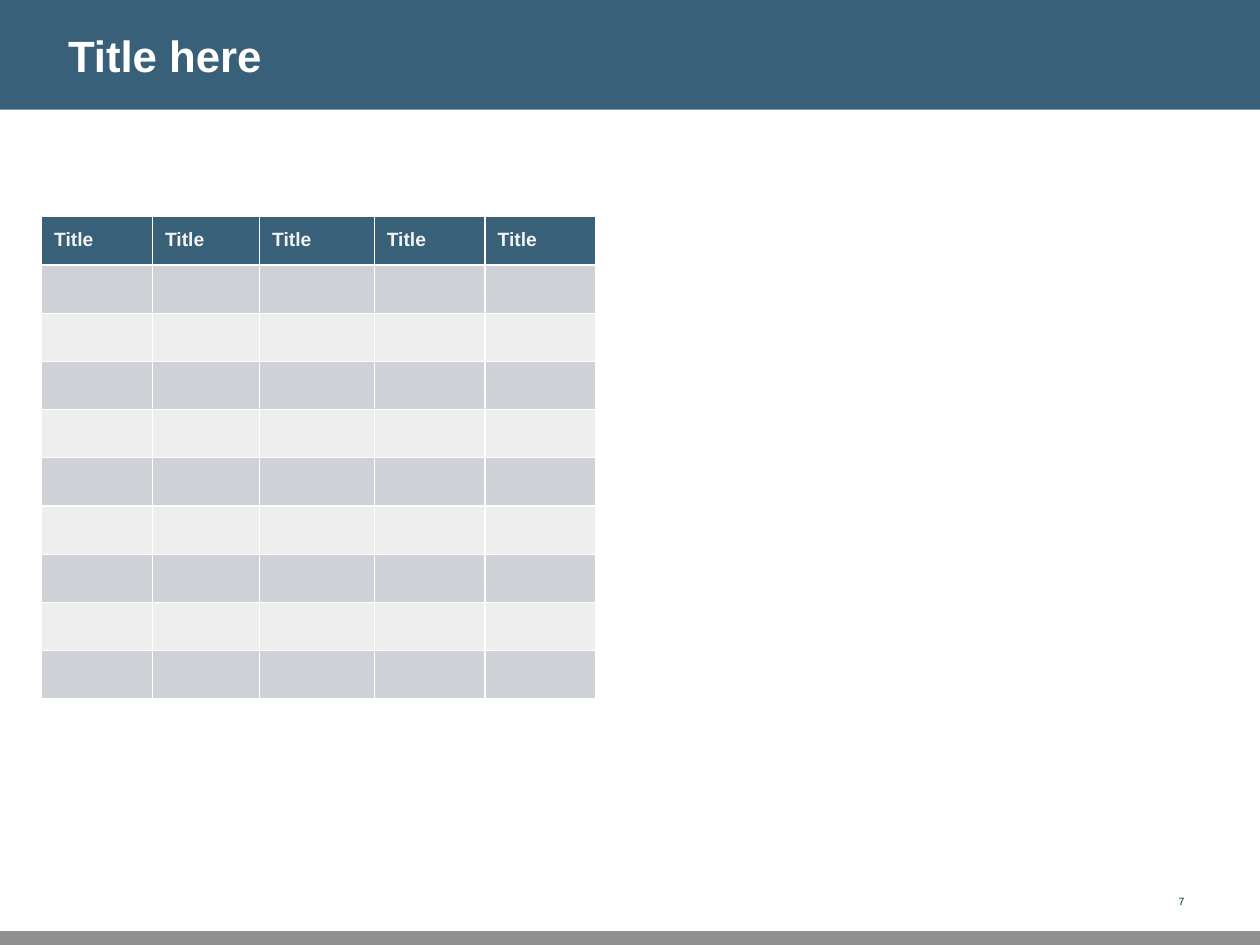
"""Build a slide with a title band, a striped table and a page number."""
from lxml import etree
from pptx import Presentation
from pptx import util as u
from pptx.dml.color import RGBColor
from pptx.enum import shapes, text
from pptx.oxml.ns import qn

HUES = {"band": "386079", "foot": "919090", "white": "FFFFFF", "head": "F3F3F3",
        "dark": "CED2D7", "light": "EEEEEE", "page": "00303C"}
PAD = u.Inches(0.1)


def paint(fill, hue):
    fill.solid()
    fill.fore_color.rgb = RGBColor.from_string(HUES[hue])


def style(frame, size, hue, bold=False, align=text.PP_ALIGN.LEFT):
    para = frame.paragraphs[0]
    para.alignment = align
    font = para.runs[0].font
    font.name, font.size, font.bold = "Arial", u.Pt(size), bold
    font.color.rgb = RGBColor.from_string(HUES[hue])


deck = Presentation()
deck.slide_width, deck.slide_height = u.Inches(10), u.Inches(7.5)
wide, high = deck.slide_width, deck.slide_height
slide = deck.slides.add_slide(deck.slide_layouts[5])
band = u.Inches(0.87)
foot = u.Inches(0.11)

for top, tall, hue in ((0, band, "band"), (high - foot, foot, "foot")):
    bar = slide.shapes.add_shape(shapes.MSO_SHAPE.RECTANGLE, 0, top, wide, tall)
    bar.shadow.inherit = False
    paint(bar.fill, hue)
    bar.line.fill.background()

title = slide.shapes.title
title.left, title.top, title.width, title.height = u.Inches(0.44), 0, u.Inches(7.87), band
slide.shapes._spTree.append(title._element)
page = slide.shapes.add_textbox(u.Inches(8.96), u.Inches(6.93), u.Inches(0.54), u.Inches(0.44))
for box, words in ((title, "Title here"), (page, "7")):
    frame = box.text_frame
    frame.text = words
    frame.word_wrap = True
    frame.auto_size = text.MSO_AUTO_SIZE.NONE
    frame.vertical_anchor = text.MSO_ANCHOR.MIDDLE
    frame.margin_left = frame.margin_right = frame.margin_top = frame.margin_bottom = PAD
style(title.text_frame, 25, "white", True)
style(page.text_frame, 6, "page", align=text.PP_ALIGN.RIGHT)

cols = [0.88, 0.85, 0.91, 0.88, 0.88]
rows = 10
table = slide.shapes.add_table(rows, len(cols), u.Inches(0.33), u.Inches(1.72),
                               u.Inches(sum(cols)), u.Inches(3.83)).table
for col, size in zip(table.columns, cols):
    col.width = u.Inches(size)
for r in range(rows):
    for c in range(len(cols)):
        cell = table.cell(r, c)
        props = cell._tc.get_or_add_tcPr()
        for side in ("a:lnL", "a:lnR", "a:lnT", "a:lnB"):
            line = etree.SubElement(props, qn(side), w=str(u.Pt(0.75)))
            solid = etree.SubElement(line, qn("a:solidFill"))
            etree.SubElement(solid, qn("a:srgbClr"), val=HUES["white"])
        cell.margin_left = cell.margin_right = PAD
        cell.margin_top = cell.margin_bottom = 0 if r else PAD
        paint(cell.fill, ("light", "dark")[r % 2] if r else "band")
        if r == 0:
            cell.text_frame.text = "Title"
            style(cell.text_frame, 11, "head", True)

deck.save("out.pptx")
